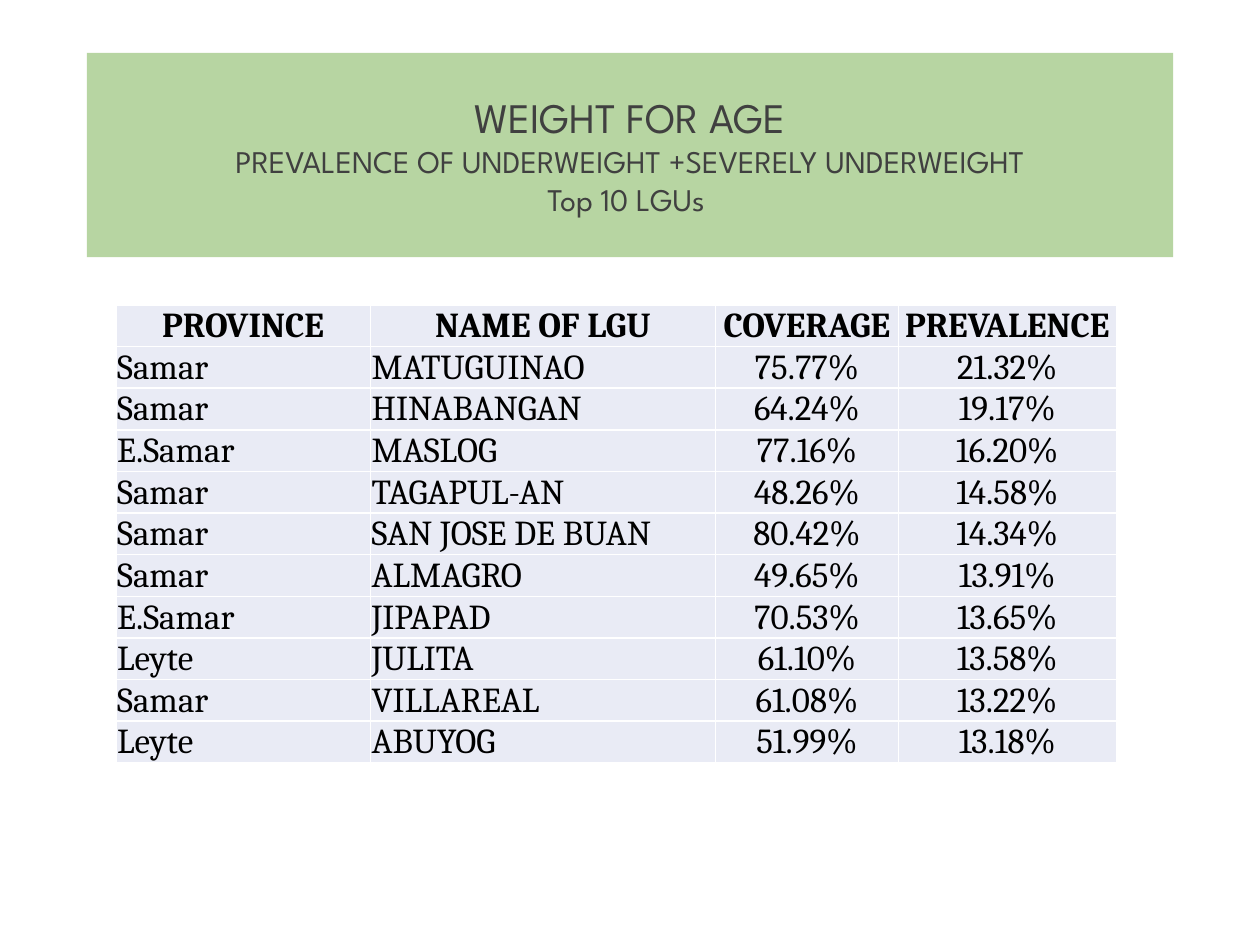
from lxml import etree
from pptx import Presentation
from pptx.dml.color import RGBColor
from pptx.enum.text import MSO_ANCHOR, MSO_AUTO_SIZE, PP_ALIGN
from pptx.oxml.ns import qn
from pptx.util import Inches, Pt

LEFT, CENTER = PP_ALIGN.LEFT, PP_ALIGN.CENTER
MIDDLE, BOTTOM = MSO_ANCHOR.MIDDLE, MSO_ANCHOR.BOTTOM
NO_AUTOFIT = MSO_AUTO_SIZE.NONE
TITLE_ONLY = 5

TITLE_LINES = [
    ("WEIGHT FOR AGE", 24),
    ("PREVALENCE OF UNDERWEIGHT +SEVERELY UNDERWEIGHT", 18),
    ("Top 10 LGUs ", 18),
]
HEADER = ("PROVINCE", "NAME OF LGU", "COVERAGE", "PREVALENCE")
LGUS = [
    ("Samar", "MATUGUINAO", 75.77, 21.32),
    ("Samar", "HINABANGAN", 64.24, 19.17),
    ("E.Samar", "MASLOG", 77.16, 16.20),
    ("Samar", "TAGAPUL-AN", 48.26, 14.58),
    ("Samar", "SAN JOSE DE BUAN", 80.42, 14.34),
    ("Samar", "ALMAGRO", 49.65, 13.91),
    ("E.Samar", "JIPAPAD", 70.53, 13.65),
    ("Leyte", "JULITA", 61.10, 13.58),
    ("Samar", "VILLAREAL", 61.08, 13.22),
    ("Leyte", "ABUYOG", 51.99, 13.18),
]
COLUMN_WIDTHS = (2.02, 2.74, 1.45, 1.73)
ROW_HEIGHT = 0.33


def rgb(color):
    return RGBColor.from_string(color)


class SlideBuilder:
    """Holds the style and the current slide."""

    title_font, table_font = "League Spartan", "Cambria"
    title_color, banner_color = "404040", "70AD47"
    table_color, cell_color, border_color = "000000", "E9EBF5", "FFFFFF"

    def __init__(self, prs):
        self.s = prs.slides.add_slide(prs.slide_layouts[TITLE_ONLY])

    def style(self, p, font, size, color, align, bold=False):
        p.alignment = align
        p.font.name, p.font.size, p.font.bold = font, Pt(size), bold
        p.font.color.rgb = rgb(color)

    def title(self, lines, x, y, w, h):
        sp = self.s.shapes.title
        sp.left, sp.top, sp.width, sp.height = map(Inches, (x, y, w, h))
        sp.fill.solid()
        sp.fill.fore_color.rgb = rgb(self.banner_color)
        color = sp.fill._xPr.find(qn("a:solidFill"))[0]
        etree.SubElement(color, qn("a:alpha"), val="50000")
        tf = sp.text_frame
        tf.auto_size, tf.word_wrap = NO_AUTOFIT, True
        tf.vertical_anchor = MIDDLE
        tf.text = "\n".join(text for text, _ in lines)
        for p, (_, size) in zip(tf.paragraphs, lines):
            self.style(p, self.title_font, size, self.title_color, CENTER)

    def borders(self, cell):
        tcPr = cell._tc.get_or_add_tcPr()
        for i, side in enumerate(("lnL", "lnR", "lnT", "lnB")):
            ln = etree.Element(qn(f"a:{side}"), w=str(Pt(1)))
            fill = etree.SubElement(ln, qn("a:solidFill"))
            etree.SubElement(fill, qn("a:srgbClr"), val=self.border_color)
            tcPr.insert(i, ln)

    def cell(self, cell, text, align, anchor, bold):
        cell.margin_left = cell.margin_right = cell.margin_top = Inches(0.01)
        cell.margin_bottom = 0
        cell.vertical_anchor = anchor
        cell.fill.solid()
        cell.fill.fore_color.rgb = rgb(self.cell_color)
        self.borders(cell)
        cell.text = text
        self.style(cell.text_frame.paragraphs[0], self.table_font, 20,
                   self.table_color, align, bold)

    def table(self, rows, x, y, widths, row_height):
        """Add a table whose first row is a bold, centred header."""
        table = self.s.shapes.add_table(
            len(rows), len(widths), Inches(x), Inches(y),
            Inches(sum(widths)), Inches(row_height * len(rows))).table
        table.first_row = table.horz_banding = False
        for column, width in zip(table.columns, widths):
            column.width = Inches(width)
        for i, row in enumerate(rows):
            table.rows[i].height = Inches(row_height)
            for j, value in enumerate(row):
                is_text = isinstance(value, str)
                self.cell(table.cell(i, j),
                          value if is_text else f"{value:.2f}%",
                          LEFT if is_text and i > 0 else CENTER,
                          BOTTOM if j == 0 else MIDDLE,
                          bold=i == 0)


def main():
    prs = Presentation()
    prs.slide_width, prs.slide_height = Inches(10), Inches(7.5)
    slide = SlideBuilder(prs)
    slide.title(TITLE_LINES, 0.69, 0.42, 8.62, 1.62)
    slide.table([HEADER] + LGUS, 0.92, 2.42, COLUMN_WIDTHS, ROW_HEIGHT)
    prs.save("out.pptx")


if __name__ == "__main__":
    main()
